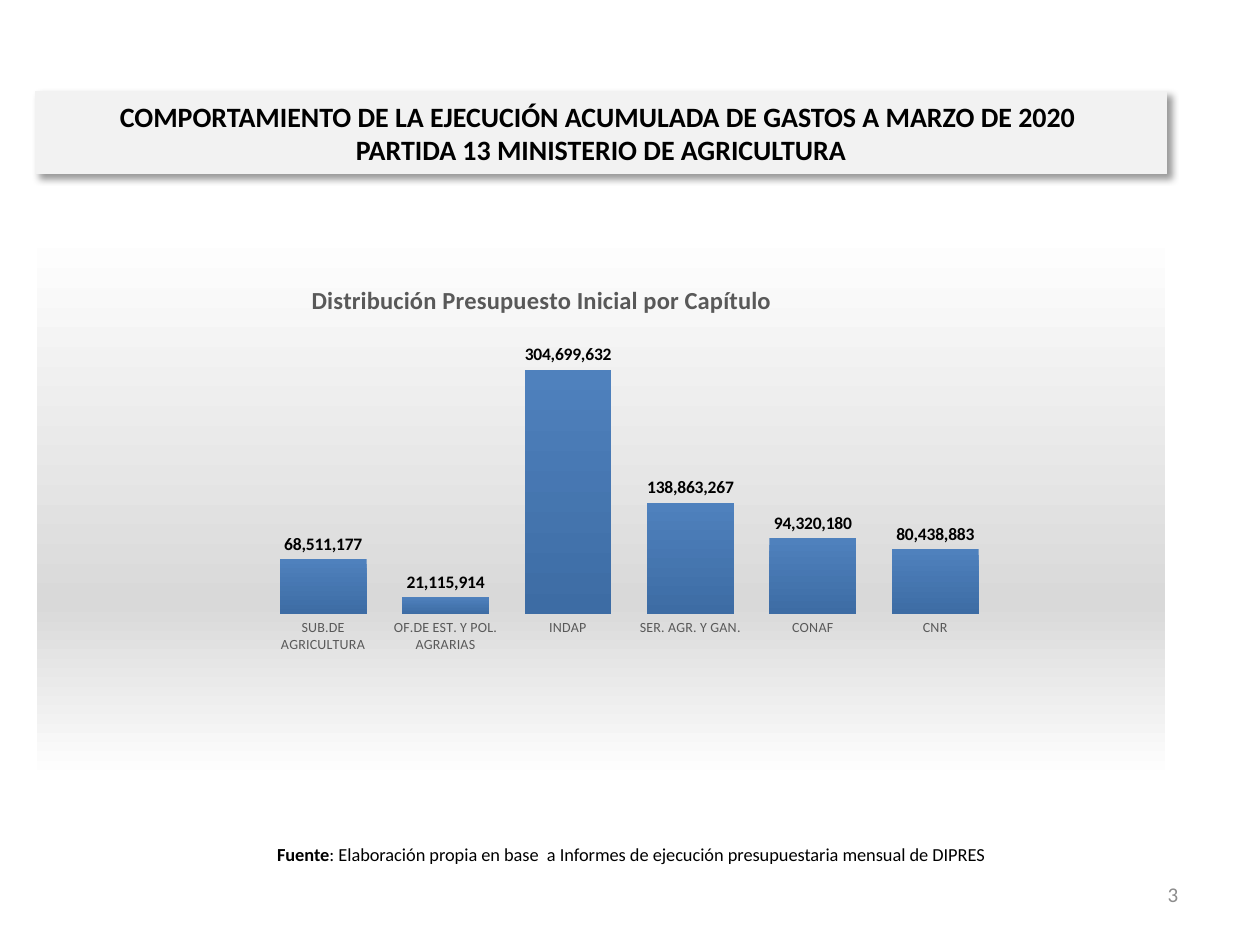
from dataclasses import dataclass

from lxml import etree
from pptx import Presentation
from pptx import util as u
from pptx.chart import data as cd
from pptx.dml.color import RGBColor
from pptx.enum import chart as ec
from pptx.enum import shapes, text
from pptx.oxml import ns, parse_xml


@dataclass(frozen=True)
class Theme:
    """Colours, type sizes and font of the slide."""
    font: str = "Calibri"
    ink: str = "000000"
    gray: str = "595959"
    pale: str = "8C8C8C"
    band: str = "F2F2F2"
    panel: tuple = ((0, "FFFFFF"), (68, "D9D9D9"), (100, "FFFFFF"))
    bars: tuple = ((0, "4F81BD"), (100, "3D6CA4"))
    head: float = 16
    title: float = 14
    page: float = 12
    note: float = 10.5
    label: float = 10
    axis: float = 8


def grad(stops):
    """Make a top-to-bottom gradient fill."""
    marks = "".join(
        f'<a:gs pos="{pos * 1000}"><a:srgbClr val="{tone}"/></a:gs>'
        for pos, tone in stops)
    return parse_xml(
        f'<a:gradFill {ns.nsdecls("a")} rotWithShape="1"><a:gsLst>{marks}'
        '</a:gsLst><a:lin ang="5400000" scaled="0"/></a:gradFill>')


def layout(x, y, w=None, h=None):
    """Make a manual chart layout from shares of the chart."""
    parts = [("xMode", "edge"), ("yMode", "edge"), ("x", x), ("y", y)]
    if w:
        parts = [("layoutTarget", "inner"), *parts, ("w", w), ("h", h)]
    body = "".join(f'<c:{tag} val="{val}"/>' for tag, val in parts)
    return parse_xml(f'<c:layout {ns.nsdecls("c")}><c:manualLayout>{body}'
                     '</c:manualLayout></c:layout>')


def place(node, new):
    """Put a layout in a chart node, in place of any old one."""
    for old in node.findall(ns.qn("c:layout")):
        node.remove(old)
    spot = 1 if node.find(ns.qn("c:tx")) is not None else 0
    node.insert(spot, new)


class Deck:
    """Holds the theme and the current slide; boxes are percent of its size."""

    def __init__(self, theme):
        """Start a deck with one blank slide."""
        self.look = theme
        self.deck = Presentation()
        self.deck.slide_width, self.deck.slide_height = u.Inches(10), u.Inches(7.5)
        self.slide = self.deck.slides.add_slide(self.deck.slide_layouts[6])

    def area(self, x, y, w, h):
        """Turn percents into slide lengths."""
        wide, high = self.deck.slide_width, self.deck.slide_height
        return [int(a * b / 100) for a, b in zip((x, y, w, h), (wide, high) * 2)]

    def style(self, font, size, tone, bold=False):
        """Set a font."""
        font.name, font.size, font.bold = self.look.font, u.Pt(size), bold
        font.color.rgb = RGBColor.from_string(tone)

    def words(self, shape, runs, size, tone, align):
        """Fill a shape with one paragraph of (words, bold) runs."""
        frame = shape.text_frame
        frame.word_wrap = True
        frame.vertical_anchor = text.MSO_ANCHOR.MIDDLE
        para = frame.paragraphs[0]
        para.alignment = align
        for part, bold in runs:
            if part == "\n":
                para.add_line_break()
                continue
            run = para.add_run()
            run.text = part
            self.style(run.font, size, tone, bold)

    def note(self, box, runs, size, tone, align):
        """Add a text box."""
        shape = self.slide.shapes.add_textbox(*self.area(*box))
        self.words(shape, runs, size, tone, align)

    def band(self, box, runs):
        """Add the shaded heading band."""
        shape = self.slide.shapes.add_shape(
            shapes.MSO_SHAPE.RECTANGLE, *self.area(*box))
        tone = RGBColor.from_string(self.look.band)
        shape.fill.solid()
        shape.fill.fore_color.rgb = tone
        shape.line.color.rgb = tone
        shape.line.width = u.Pt(0.75)
        shape.shadow.inherit = False
        glow = shape._element.spPr.find(ns.qn("a:effectLst"))
        glow.append(parse_xml(
            f'<a:outerShdw {ns.nsdecls("a")} blurRad="50800" dist="38100" '
            'dir="2700000" algn="tl" rotWithShape="0"><a:srgbClr val="000000">'
            '<a:alpha val="40000"/></a:srgbClr></a:outerShdw>'))
        self.words(shape, runs, self.look.head, self.look.ink,
                   text.PP_ALIGN.CENTER)

    def chart(self, box, title, rows):
        """Add the column chart on its gradient panel."""
        look = self.look
        data = cd.CategoryChartData(number_format="#,##0")
        data.categories = list(rows)
        data.add_series("Presupuesto Inicial", list(rows.values()))
        chart = self.slide.shapes.add_chart(
            ec.XL_CHART_TYPE.COLUMN_CLUSTERED, *self.area(*box), data).chart
        self.style(chart.font, look.label, look.ink)
        chart.has_legend = False
        run = chart.chart_title.text_frame.paragraphs[0].add_run()
        run.text = title
        self.style(run.font, look.title, look.gray, True)
        chart.chart_title.include_in_layout = False
        self.axes(chart)
        self.bars(chart.plots[0])
        root = chart._chartSpace.chart
        place(root.find(ns.qn("c:title")), layout(0.24, 0.09))
        place(root.plotArea, layout(0.2, 0.19, 0.65, 0.51))
        panel = parse_xml(f'<c:spPr {ns.nsdecls("c", "a")}/>')
        panel.append(grad(look.panel))
        edge = etree.SubElement(panel, ns.qn("a:ln"), w="9525")
        paint = etree.SubElement(edge, ns.qn("a:solidFill"))
        etree.SubElement(paint, ns.qn("a:srgbClr"), val="FFFFFF")
        root.addnext(panel)

    def axes(self, chart):
        """Show only the category names."""
        names, scale = chart.category_axis, chart.value_axis
        names.major_tick_mark = ec.XL_TICK_MARK.NONE
        names.format.line.fill.background()
        self.style(names.tick_labels.font, self.look.axis, self.look.gray)
        scale.has_major_gridlines = False
        scale.minimum_scale, scale.maximum_scale = 0, 350_000_000
        scale.visible = False

    def bars(self, plot):
        """Paint and label the columns."""
        plot.gap_width = 41
        plot.vary_by_categories = False
        plot.series[0]._element.get_or_add_spPr().append(grad(self.look.bars))
        plot.has_data_labels = True
        tags = plot.data_labels
        tags.show_value = True
        tags.number_format, tags.number_format_is_linked = "#,##0", False
        tags.position = ec.XL_LABEL_POSITION.OUTSIDE_END
        self.style(tags.font, self.look.label, self.look.ink, True)


def main():
    """Build the slide."""
    look = Theme()
    deck = Deck(look)
    mid, right = text.PP_ALIGN.CENTER, text.PP_ALIGN.RIGHT
    deck.note((71.2, 92, 23.3, 5.33), [("3", False)], look.page, look.pale, right)
    deck.band((2.8, 9.73, 89.8, 8.67), [
        ("COMPORTAMIENTO DE LA EJECUCIÓN ACUMULADA DE GASTOS A MARZO DE 2020 ", True),
        ("\n", True),
        ("PARTIDA 13 MINISTERIO DE AGRICULTURA", True)])
    deck.note((7.7, 87.73, 84.8, 5.33), [
        ("Fuente", True),
        (": Elaboración propia en base  a Informes de ejecución presupuestaria"
         " mensual de DIPRES", False)], look.note, look.ink, mid)
    deck.chart((2.8, 24.13, 89.8, 58.4),
               "Distribución Presupuesto Inicial por Capítulo", {
                   "SUB.DE AGRICULTURA": 68511177,
                   "OF.DE EST. Y POL. AGRARIAS": 21115914,
                   "INDAP": 304699632,
                   "SER. AGR. Y GAN.": 138863267,
                   "CONAF": 94320180,
                   "CNR": 80438883})
    deck.deck.save("out.pptx")


if __name__ == "__main__":
    main()
